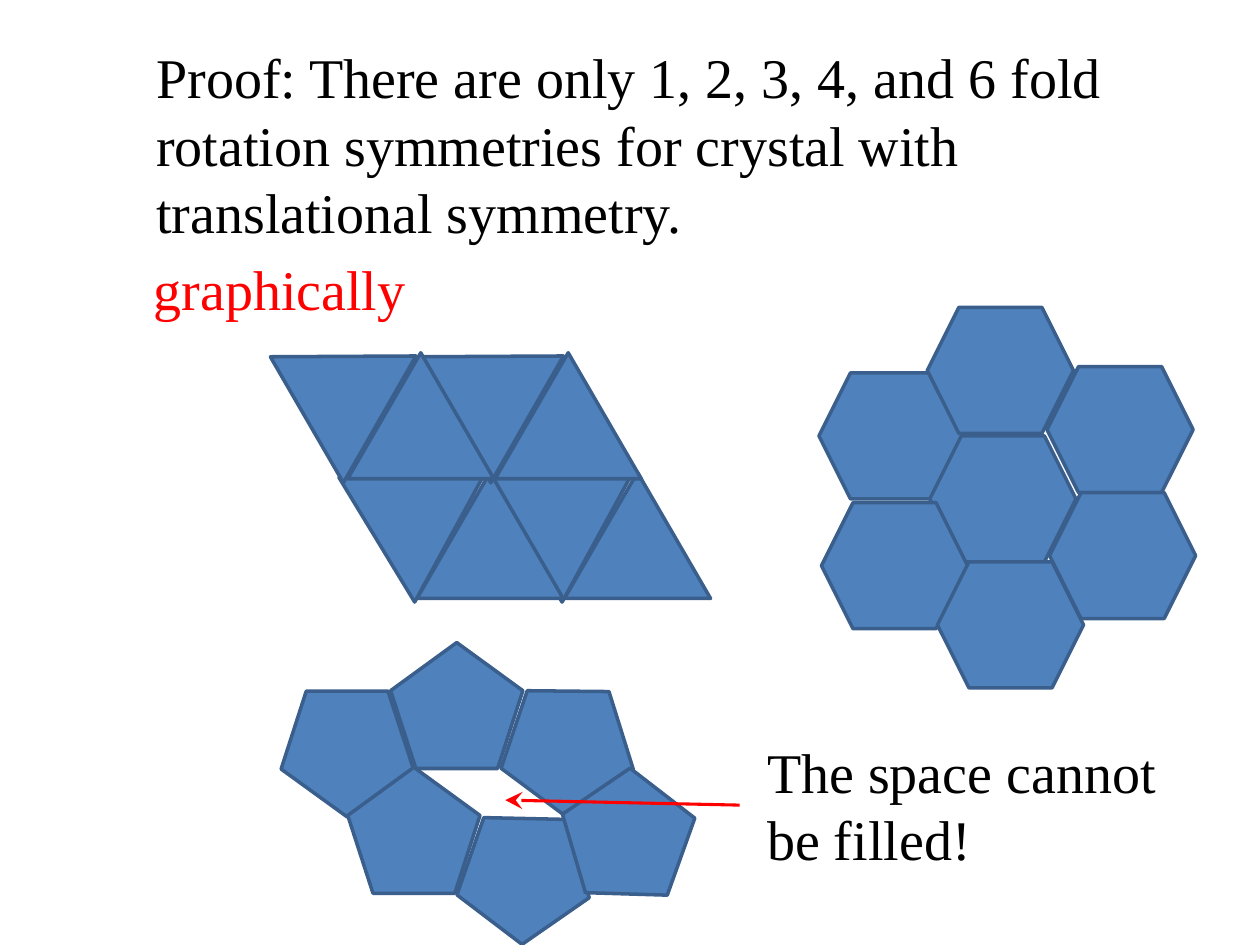
"""Build a slide showing which regular polygons can tile the plane."""
from dataclasses import dataclass
from typing import Any

from lxml.etree import SubElement
from pptx import Presentation
from pptx.dml.color import RGBColor
from pptx.enum.shapes import MSO_CONNECTOR, MSO_SHAPE
from pptx.enum.text import MSO_ANCHOR, MSO_AUTO_SIZE, PP_ALIGN
from pptx.oxml.ns import qn
from pptx.util import Inches, Length, Pt


@dataclass(frozen=True)
class Theme:
    font: str = "Times New Roman"
    size: int = 32
    text: RGBColor = RGBColor(0, 0, 0)
    accent: RGBColor = RGBColor(0xFF, 0, 0)
    fill: RGBColor = RGBColor(0x4F, 0x81, 0xBD)
    outline: RGBColor = RGBColor(0x3A, 0x5F, 0x8C)
    outline_width: float = 2
    arrow_width: float = 1.75


@dataclass(frozen=True)
class Tile:
    col: float
    row: float
    rotation: float = 0


THEME = Theme()
COLS, ROWS = 100, 75
PENTAGON_SIZE = (10.5, 10)
TILE_SIZE = (11.6, 10)

PENTAGONS = [
    Tile(31, 51), Tile(40.1, 53.9, 36.6), Tile(22, 53.9, 323.9),
    Tile(27.6, 60.9), Tile(36, 64, 325.2), Tile(44.1, 61.3, 289.7),
]
HEXAGONS = [
    Tile(65, 29.6), Tile(73.6, 24.4), Tile(73.8, 34.6), Tile(83.1, 29.1),
    Tile(65.2, 39.9), Tile(83.3, 39.1), Tile(74.4, 44.6),
]


def grid(units: float) -> Length:
    """Convert grid columns or rows to a length."""
    return Inches(units * 10 / COLS)


def triangle_tiles() -> list[Tile]:
    """Pair upright and turned triangles over a slanted two by two lattice."""
    tiles = []
    for r, rotation in ((1, 298.6), (0, 299.8)):
        for c in (1, 0):
            col, row = 27.6 + 11.7 * c + 5.5 * r, 28 + 9.5 * r
            tiles += [Tile(col, row), Tile(col - 7.6, row - 2.2, rotation)]
    return tiles


def draw_tiles(s: Any, kind: MSO_SHAPE, size: tuple[float, float], tiles: list[Tile]) -> None:
    """Draw equal polygons at their grid places."""
    for tile in tiles:
        sp = s.shapes.add_shape(kind, *map(grid, (tile.col, tile.row, *size)))
        sp.rotation = tile.rotation
        sp.shadow.inherit = False
        sp.fill.solid()
        sp.fill.fore_color.rgb = THEME.fill
        sp.line.color.rgb = THEME.outline
        sp.line.width = Pt(THEME.outline_width)


def write_lines(sp: Any, lines: list[str], color: RGBColor) -> None:
    """Fill a text shape with one paragraph per line."""
    tf = sp.text_frame
    tf.text = "\n".join(lines)
    tf.word_wrap = False
    tf.auto_size = MSO_AUTO_SIZE.SHAPE_TO_FIT_TEXT
    tf.vertical_anchor = MSO_ANCHOR.TOP
    for p in tf.paragraphs:
        p.alignment = PP_ALIGN.LEFT
        p.font.name = THEME.font
        p.font.size = Pt(THEME.size)
        p.font.color.rgb = color


def add_label(s: Any, box: tuple[float, ...], lines: list[str], color: RGBColor) -> None:
    """Add a text box on the grid."""
    write_lines(s.shapes.add_textbox(*map(grid, box)), lines, color)


def add_arrow(s: Any, ends: tuple[float, ...]) -> None:
    """Draw an accent arrow between two grid points."""
    cxn = s.shapes.add_connector(MSO_CONNECTOR.STRAIGHT, *map(grid, ends))
    cxn.line.color.rgb = THEME.accent
    cxn.line.width = Pt(THEME.arrow_width)
    SubElement(cxn.line._get_or_add_ln(), qn("a:tailEnd"), type="stealth", w="lg", len="lg")
    SubElement(cxn._element.spPr, qn("a:effectLst"))


def main() -> None:
    """Compose and save the slide."""
    prs = Presentation()
    prs.slide_width, prs.slide_height = grid(COLS), grid(ROWS)
    s = prs.slides.add_slide(prs.slide_layouts[5])
    title = s.shapes.title
    title.left, title.top, title.width, title.height = map(grid, (11.4, 2.9, 77.7, 17.2))
    write_lines(title, [
        "Proof: There are only 1, 2, 3, 4, and 6 fold",
        "rotation symmetries for crystal with",
        "translational symmetry.",
    ], THEME.text)
    draw_tiles(s, MSO_SHAPE.REGULAR_PENTAGON, PENTAGON_SIZE, PENTAGONS)
    draw_tiles(s, MSO_SHAPE.HEXAGON, TILE_SIZE, HEXAGONS)
    draw_tiles(s, MSO_SHAPE.ISOSCELES_TRIANGLE, TILE_SIZE, triangle_tiles())
    add_arrow(s, (58.7, 63.9, 40.1, 63.5))
    add_label(s, (59.9, 58, 33.2, 11.8), ["The space cannot", "be filled!"], THEME.text)
    add_label(s, (11.2, 19.7, 22.2, 6.4), ["graphically"], THEME.accent)
    prs.save("out.pptx")


if __name__ == "__main__":
    main()
